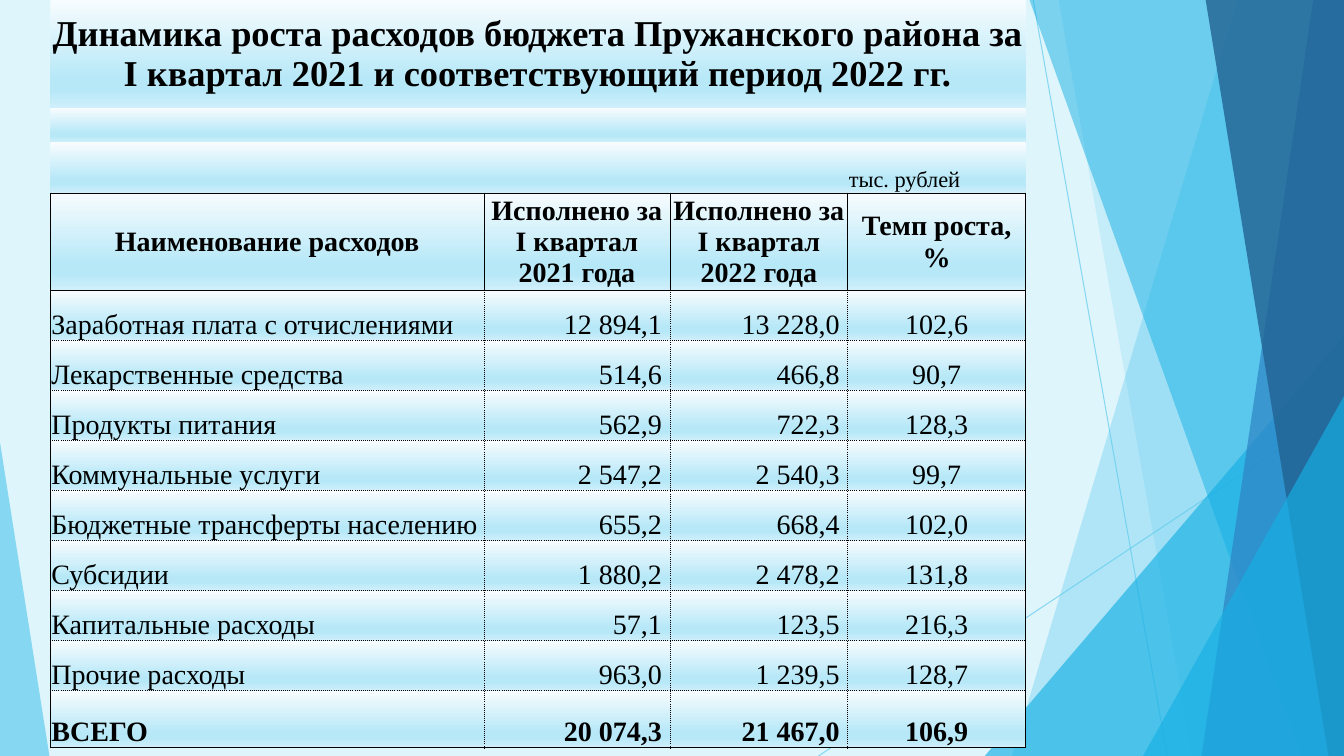
from dataclasses import dataclass
from typing import Optional

from lxml import etree
from pptx import Presentation
from pptx.dml.color import RGBColor
from pptx.enum import shapes, text
from pptx.oxml import ns
from pptx.util import Pt


@dataclass(frozen=True)
class Theme:
    font: str = "Times New Roman"
    ink: str = "000000"
    background: str = "DFF5FC"
    sky: str = "5FCBEF"
    cyan: str = "17B0E4"
    blue: str = "2E83C3"
    navy: str = "226292"
    cell_stops: tuple = ((0, "F7FCFE"), (74, "B7E8F8"), (83, "B7E8F8"), (100, "CFEFFA"))
    title_size: float = 26
    body_size: float = 20
    unit_size: float = 16
    border: float = 0.5
    hairline: float = 0.75


@dataclass(frozen=True)
class Ray:
    x1: float
    y1: float
    x2: float
    y2: float


@dataclass(frozen=True)
class Band:
    top_x: float
    bottom_x: float
    color: str
    opacity: int


@dataclass(frozen=True)
class Corner:
    left: float
    top: float
    width: float
    height: float
    apex: float
    color: str
    opacity: int


@dataclass(frozen=True)
class Expense:
    name: str
    year_2021: str
    year_2022: str
    growth: str


THEME = Theme()
WIDTH, HEIGHT = 960, 540
BAND_TOP = -0.72

DECOR = (
    Ray(738, 0, 833.76, HEIGHT),
    Ray(WIDTH, 290.16, 584.64, HEIGHT),
    Band(884.16, 722.88, THEME.sky, 36),
    Band(756, 851.76, THEME.sky, 20),
    Corner(703.44, 239.76, 256.56, 300.24, 1, THEME.cyan, 66),
    Band(735.12, 929.52, THEME.cyan, 50),
    Band(938.16, 858.24, THEME.blue, 70),
    Band(861.12, 948.96, THEME.navy, 80),
    Corner(816.48, 282.96, 143.52, 257.04, 1, THEME.cyan, 66),
    Corner(0, 316.08, 35.28, 223.92, 0, THEME.sky, 70),
)

TITLE = "Динамика роста расходов бюджета Пружанского района за I квартал 2021 и соответствующий период 2022 гг."
UNIT = "тыс. рублей"
HEADERS = ("Наименование расходов", "Исполнено за I квартал 2021 года",
           "Исполнено за I квартал 2022 года", "Темп роста, %")
EXPENSES = (
    Expense("Заработная плата с отчислениями", "12 894,1", "13 228,0", "102,6"),
    Expense("Лекарственные средства", "514,6", "466,8", "90,7"),
    Expense("Продукты питания", "562,9", "722,3", "128,3"),
    Expense("Коммунальные услуги", "2 547,2", "2 540,3", "99,7"),
    Expense("Бюджетные трансферты населению", "655,2", "668,4", "102,0"),
    Expense("Субсидии", "1 880,2", "2 478,2", "131,8"),
    Expense("Капитальные расходы", "57,1", "123,5", "216,3"),
    Expense("Прочие расходы", "963,0", "1 239,5", "128,7"),
    Expense("ВСЕГО", "20 074,3", "21 467,0", "106,9"),
)
UNIT_ROW, HEADER_ROW, FIRST_ROW = 2, 3, 4
COLUMNS = (309.6, 133, 127, 127)
ROWS = (77, 24.7, 36.1, 69.5) + (35.8,) * (len(EXPENSES) - 1) + (40.7,)
LEFT = text.PP_ALIGN.LEFT
CENTER = text.PP_ALIGN.CENTER
RIGHT = text.PP_ALIGN.RIGHT


def sub(parent, tag: str, **attrs):
    return etree.SubElement(parent, ns.qn(tag), {k: str(v) for k, v in attrs.items()})


def fade(sp_pr, opacity: int) -> None:
    for clr in list(sp_pr.iter(ns.qn("a:srgbClr"))):
        sub(clr, "a:alpha", val=opacity * 1000)


def paint(sp, color: str, opacity: int) -> None:
    sp.shadow.inherit = False
    sp.fill.solid()
    sp.fill.fore_color.rgb = RGBColor.from_string(color)
    sp.line.fill.background()
    fade(sp._element.spPr, opacity)


def draw_ray(s, ray: Ray) -> None:
    line = s.shapes.add_connector(shapes.MSO_CONNECTOR.STRAIGHT,
                                  Pt(ray.x1), Pt(ray.y1), Pt(ray.x2), Pt(ray.y2))
    line.line.color.rgb = RGBColor.from_string(THEME.sky)
    line.line.width = Pt(THEME.hairline)
    fade(line._element.spPr, 70)
    sub(line._element.spPr, "a:effectLst")


def draw_band(s, band: Band) -> None:
    fb = s.shapes.build_freeform(Pt(band.top_x), Pt(BAND_TOP))
    fb.add_line_segments([(Pt(WIDTH), Pt(BAND_TOP)), (Pt(WIDTH), Pt(HEIGHT)),
                          (Pt(band.bottom_x), Pt(HEIGHT))])
    paint(fb.convert_to_shape(), band.color, band.opacity)


def draw_corner(s, corner: Corner) -> None:
    sp = s.shapes.add_shape(shapes.MSO_SHAPE.ISOSCELES_TRIANGLE, Pt(corner.left),
                            Pt(corner.top), Pt(corner.width), Pt(corner.height))
    sp.adjustments[0] = corner.apex
    paint(sp, corner.color, corner.opacity)


def row_line(k: int) -> Optional[str]:
    if k < HEADER_ROW:
        return None
    return "solid" if k in (HEADER_ROW, FIRST_ROW, len(ROWS)) else "sysDot"


def column_line(row: int, k: int) -> Optional[str]:
    if row < HEADER_ROW:
        return None
    return "solid" if row == HEADER_ROW or k in (0, len(COLUMNS)) else "sysDot"


def format_cell(cell, row: int, col: int) -> None:
    cell.margin_left = cell.margin_right = cell.margin_top = Pt(0.72)
    cell.margin_bottom = Pt(0)
    tc_pr = cell._tc.get_or_add_tcPr()
    edges = (("L", column_line(row, col)), ("R", column_line(row, col + 1)),
             ("T", row_line(row)), ("B", row_line(row + 1)))
    for side, dash in edges:
        ln = sub(tc_pr, f"a:ln{side}", w=Pt(THEME.border))
        if dash:
            sub(sub(ln, "a:solidFill"), "a:srgbClr", val=THEME.ink)
            sub(ln, "a:prstDash", val=dash)
        else:
            sub(ln, "a:noFill")
    grad = sub(tc_pr, "a:gradFill", rotWithShape=1)
    stops = sub(grad, "a:gsLst")
    for pos, color in THEME.cell_stops:
        sub(sub(stops, "a:gs", pos=pos * 1000), "a:srgbClr", val=color)
    sub(grad, "a:lin", ang=5400000, scaled=0)


def write(cell, words: str, *, size: float = THEME.body_size, bold: bool = False,
          align=LEFT, anchor=text.MSO_ANCHOR.BOTTOM) -> None:
    cell.vertical_anchor = anchor
    p = cell.text_frame.paragraphs[0]
    p.alignment = align
    r = p.add_run()
    r.text = words
    r.font.name, r.font.size, r.font.bold = THEME.font, Pt(size), bold
    r.font.color.rgb = RGBColor.from_string(THEME.ink)


def draw_table(s) -> None:
    tbl = s.shapes.add_table(len(ROWS), len(COLUMNS), Pt(36), Pt(0),
                             Pt(sum(COLUMNS)), Pt(sum(ROWS))).table
    tbl.first_row = tbl.horz_banding = False
    for column, width in zip(tbl.columns, COLUMNS):
        column.width = Pt(width)
    for i, height in enumerate(ROWS):
        tbl.rows[i].height = Pt(height)
        for j in range(len(COLUMNS)):
            format_cell(tbl.cell(i, j), i, j)
    middle = text.MSO_ANCHOR.MIDDLE
    tbl.cell(0, 0).merge(tbl.cell(0, len(COLUMNS) - 1))
    write(tbl.cell(0, 0), TITLE, size=THEME.title_size, bold=True, align=CENTER, anchor=middle)
    write(tbl.cell(UNIT_ROW, len(COLUMNS) - 1), UNIT, size=THEME.unit_size)
    for j, header in enumerate(HEADERS):
        write(tbl.cell(HEADER_ROW, j), header, bold=True, align=CENTER, anchor=middle)
    for i, e in enumerate(EXPENSES, FIRST_ROW):
        values = (e.name, e.year_2021, e.year_2022, e.growth)
        for j, (value, align) in enumerate(zip(values, (LEFT, RIGHT, RIGHT, CENTER))):
            write(tbl.cell(i, j), value, bold=e is EXPENSES[-1], align=align)
            if align == RIGHT:
                tbl.cell(i, j).margin_right = Pt(5.8)


def main() -> None:
    prs = Presentation()
    prs.slide_width, prs.slide_height = Pt(WIDTH), Pt(HEIGHT)
    s = prs.slides.add_slide(prs.slide_layouts[6])
    s.background.fill.solid()
    s.background.fill.fore_color.rgb = RGBColor.from_string(THEME.background)
    draw = {Ray: draw_ray, Band: draw_band, Corner: draw_corner}
    for item in DECOR:
        draw[type(item)](s, item)
    draw_table(s)
    prs.save("out.pptx")


if __name__ == "__main__":
    main()
